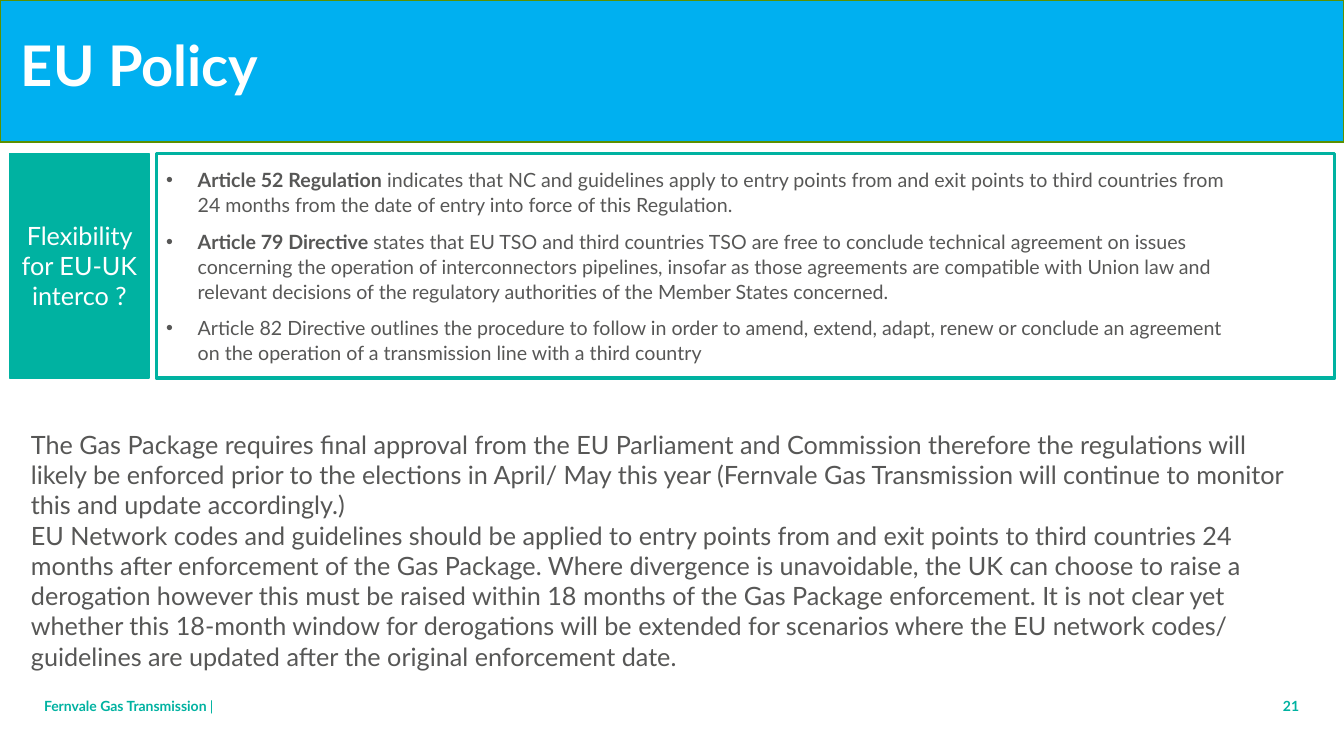
import pptx
import pptx.util
import pptx.dml.color
import pptx.enum.shapes
import pptx.enum.text
import lxml.etree

Pt = pptx.util.Pt
ALIGN = pptx.enum.text.PP_ALIGN
ANCHOR = pptx.enum.text.MSO_ANCHOR
FONT = "Lato"
COLORS = {
    "banner": "00B0F0",
    "banner_line": "5C9100",
    "teal": "00B2A1",
    "grey": "575756",
    "white": "FFFFFF",
}

# Each article: bold lead, then regular text
ARTICLES = [
    ("Article 52 Regulation",
     " indicates that NC and guidelines apply to entry points from and exit points to third "
     "countries from 24 months from the date of entry into force of this Regulation."),
    ("Article 79 Directive",
     " states that EU TSO and third countries TSO are free to conclude technical agreement on "
     "issues concerning the operation of interconnectors pipelines, insofar as those agreements "
     "are compatible with Union law and relevant decisions of the regulatory authorities of the "
     "Member States concerned."),
    ("",
     "Article 82 Directive outlines the procedure to follow in order to amend, extend, adapt, "
     "renew or conclude an agreement on the operation of a transmission line with a third country"),
]
SUMMARY = [
    "The Gas Package requires final approval from the EU Parliament and Commission therefore the "
    "regulations will likely be enforced prior to the elections in April/ May this year (Fernvale "
    "Gas Transmission will continue to monitor this and update accordingly.)",
    "EU Network codes and guidelines should be applied to entry points from and exit points to "
    "third countries 24 months after enforcement of the Gas Package. Where divergence is "
    "unavoidable, the UK can choose to raise a derogation however this must be raised within 18 "
    "months of the Gas Package enforcement. It is not clear yet whether this 18-month window for "
    "derogations will be extended for scenarios where the EU network codes/ guidelines are "
    "updated after the original enforcement date.",
]


def rgb(name):
    return pptx.dml.color.RGBColor.from_string(COLORS[name])


def place(shape, left, top, width, height):
    shape.left, shape.top = Pt(left), Pt(top)
    shape.width, shape.height = Pt(width), Pt(height)


def format_run(run, size, color, bold=False):
    run.font.name = FONT
    run.font.size = Pt(size)
    run.font.bold = bold
    run.font.color.rgb = rgb(color)


def set_frame(frame, anchor, margin=None):
    frame.word_wrap = True
    frame.auto_size = pptx.enum.text.MSO_AUTO_SIZE.NONE
    frame.vertical_anchor = anchor
    if margin is not None:
        frame.margin_left = frame.margin_right = Pt(margin)
        frame.margin_top = frame.margin_bottom = Pt(margin)


def add_box(slide, box, fill, line):
    shape = slide.shapes.add_shape(
        pptx.enum.shapes.MSO_SHAPE.RECTANGLE, *[Pt(value) for value in box])
    shape.shadow.inherit = False
    shape.fill.solid()
    shape.fill.fore_color.rgb = rgb(fill)
    shape.line.color.rgb = rgb(line)
    shape.line.width = Pt(1)
    return shape


def add_text(slide, box, paragraphs, size, color, bold=False,
             anchor=ANCHOR.TOP, align=ALIGN.LEFT, margin=None):
    shape = slide.shapes.add_textbox(*[Pt(value) for value in box])
    frame = shape.text_frame
    set_frame(frame, anchor, margin)
    frame.text = "\n".join(paragraphs)
    for paragraph in frame.paragraphs:
        paragraph.alignment = align
        format_run(paragraph.runs[0], size, color, bold)
    return shape


def set_bullet(paragraph, indent):
    properties = paragraph._p.get_or_add_pPr()
    properties.set("marL", str(Pt(indent)))
    properties.set("indent", str(-Pt(indent)))
    namespace = "{http://schemas.openxmlformats.org/drawingml/2006/main}"
    lxml.etree.SubElement(properties, namespace + "buFont", typeface="Arial")
    lxml.etree.SubElement(properties, namespace + "buChar", char="•")


def build_header(slide, left, top, width, height):
    banner = add_box(slide, (left, top, width, height), "banner", "banner_line")
    title = slide.shapes.title
    title._element.addprevious(banner._element)  # banner goes behind the title
    place(title, left + 15, top + 27.5, width - 63.5, 67.5)
    frame = title.text_frame
    set_frame(frame, ANCHOR.TOP, 0)
    frame.text = "EU Policy"
    paragraph = frame.paragraphs[0]
    paragraph.alignment = ALIGN.LEFT
    paragraph.line_spacing = 0.9
    format_run(paragraph.runs[0], 40, "white", True)


def build_articles(slide, left, top, width, height):
    label_width, gap = 99.5, 5
    # Topic label
    label = add_box(slide, (left, top, label_width, height), "teal", "teal")
    frame = label.text_frame
    set_frame(frame, ANCHOR.MIDDLE)
    frame.text = "Flexibility for EU-UK interco ?"
    frame.paragraphs[0].alignment = ALIGN.CENTER
    format_run(frame.paragraphs[0].runs[0], 18, "white")

    # Framed list of articles
    body = slide.placeholders[1]
    offset = label_width + gap
    place(body, left + offset, top, width - offset, height)
    body.line.color.rgb = rgb("teal")
    body.line.width = Pt(2.25)
    frame = body.text_frame
    set_frame(frame, ANCHOR.MIDDLE)
    frame.margin_right = Pt(71)
    frame.text = "\n".join(lead or text for lead, text in ARTICLES)
    for paragraph, (lead, text) in zip(frame.paragraphs, ARTICLES):
        paragraph.alignment = ALIGN.LEFT
        paragraph.line_spacing = 1.07
        paragraph.space_before = Pt(0)
        paragraph.space_after = Pt(8)
        set_bullet(paragraph, 22.5)
        format_run(paragraph.runs[0], 14, "grey", bool(lead))
        if lead:
            run = paragraph.add_run()
            run.text = text
            format_run(run, 14, "grey")


def build_footer(slide, left, top, width, height):
    company = add_text(slide, (left, top, 150, height), ["Fernvale Gas Transmission "],
                       10, "teal", True, ANCHOR.MIDDLE, margin=0)
    divider = company.text_frame.paragraphs[0].add_run()
    divider.text = "|"
    format_run(divider, 10, "teal")
    add_text(slide, (left + width - 34, top, 34, height), ["21"],
             10, "teal", True, ANCHOR.MIDDLE, ALIGN.RIGHT, 0)


def main():
    presentation = pptx.Presentation()
    presentation.slide_width, presentation.slide_height = Pt(960), Pt(540)
    slide = presentation.slides.add_slide(presentation.slide_layouts[1])
    build_header(slide, 0, 0, 960, 101.5)
    build_articles(slide, 7, 109.5, 946.5, 160.5)
    add_text(slide, (15, 303, 926.5, 181.5), SUMMARY, 18, "grey")
    build_footer(slide, 31.5, 495.5, 896.5, 17)
    presentation.save("out.pptx")


if __name__ == "__main__":
    main()
